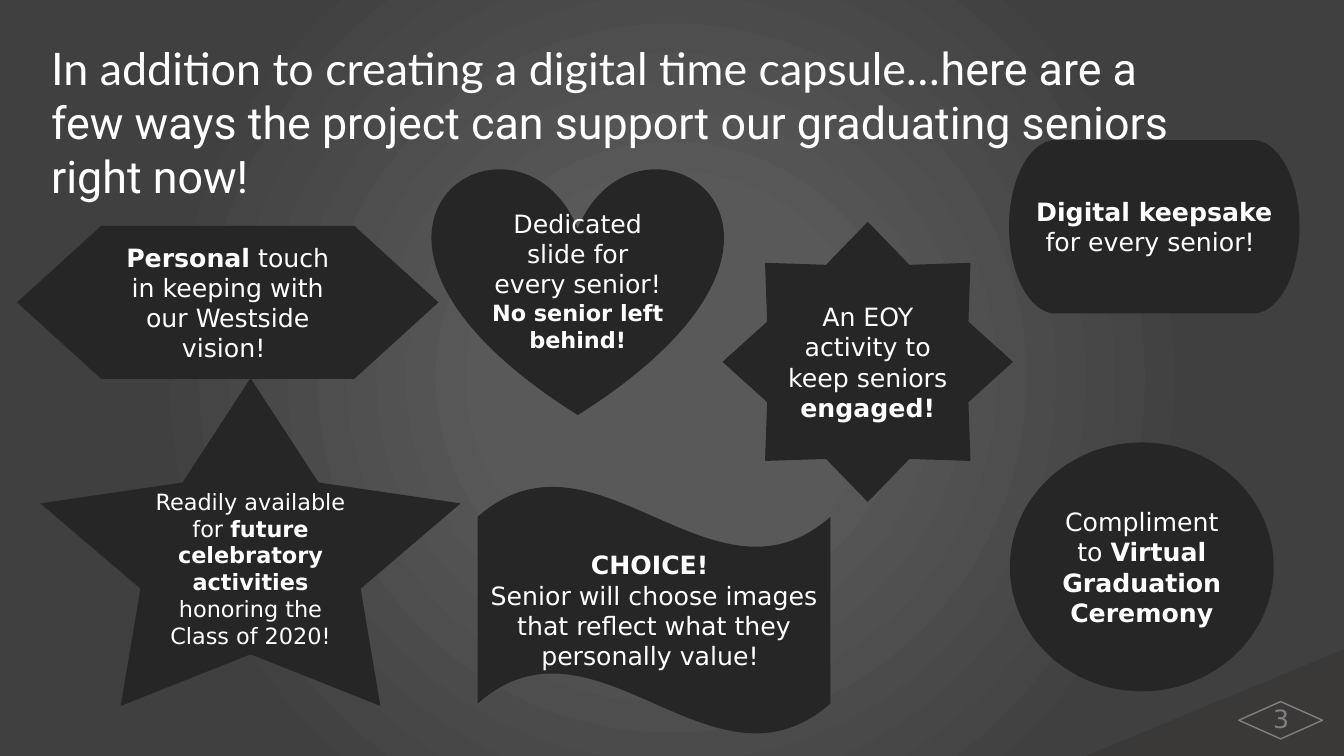
import pptx
import pptx.dml.color
import pptx.enum.shapes
import pptx.enum.text
import pptx.oxml
import pptx.oxml.ns
import pptx.util

Cm = pptx.util.Cm
Pt = pptx.util.Pt
RGB = pptx.dml.color.RGBColor
SHAPE = pptx.enum.shapes.MSO_SHAPE
ALIGN = pptx.enum.text.PP_ALIGN
MIDDLE = pptx.enum.text.MSO_ANCHOR.MIDDLE

WHITE = RGB(0xFF, 0xFF, 0xFF)
CHARCOAL = RGB(0x26, 0x26, 0x26)
CORNER_BROWN = RGB(0x3B, 0x38, 0x38)
GREY = RGB(0x80, 0x80, 0x80)
GLOW = RGB(0x59, 0x59, 0x59)
EDGE = RGB(0x40, 0x40, 0x40)
BODY_FONT = "DejaVu Sans"

# Shape, box in cm, and paragraphs of (text, size, bold) runs
IDEAS = [
    (SHAPE.HEART, (10.9, 4.19, 7.32, 6.27),
     [[("Dedicated slide for every senior! ", 18, False),
       ("No senior left behind!", 16, True)]]),
    (SHAPE.FLOWCHART_TERMINATOR, (25.43, 3.53, 7.32, 4.37),
     [[("Digital keepsake ", 18, True), ("for every senior! ", 18, False)]]),
    (SHAPE.FLOWCHART_CONNECTOR, (25.45, 11.15, 6.65, 6.27),
     [[("Compliment to ", 18, False),
       ("Virtual Graduation Ceremony", 18, True)]]),
    (SHAPE.WAVE, (12.04, 12.24, 8.89, 6.27),
     [[("CHOICE! ", 18, True)],
      [("Senior will choose images that reflect what they "
        "personally value! ", 18, False)]]),
    (SHAPE.FLOWCHART_PREPARATION, (0.43, 5.69, 10.62, 3.86),
     [[("Personal", 18, True),
       (" touch in keeping with our Westside vision! ", 18, False)]]),
    (SHAPE.STAR_5_POINT, (1.02, 9.53, 10.59, 8.26),
     [[("Readily available for ", 16, False),
       ("future celebratory activities ", 16, True),
       ("honoring the Class of 2020!", 16, False)]]),
    (SHAPE.STAR_8_POINT, (18.21, 5.59, 7.32, 7.06),
     [[("An EOY activity to keep seniors ", 18, False),
       ("engaged!", 18, True)]]),
]


def add_run(p, text, size, font=BODY_FONT, color=WHITE, bold=False):
    r = p.add_run()
    r.text = text
    r.font.size = Pt(size)
    r.font.name = font
    r.font.color.rgb = color
    r.font.bold = bold


def add_plain_shape(s, kind, box, fill=None, line=None):
    sp = s.shapes.add_shape(kind, *map(Cm, box))
    sp.shadow.inherit = False
    if fill is None:
        sp.fill.background()
    else:
        sp.fill.solid()
        sp.fill.fore_color.rgb = fill
    if line is None:
        sp.line.fill.background()
    else:
        sp.line.color.rgb = line
        sp.line.width = Pt(1)
    return sp


def add_text_box(s, box):
    tf = s.shapes.add_textbox(*map(Cm, box)).text_frame
    tf.word_wrap = True
    return tf


def paint_background(s):
    """Fill the slide with a glow that darkens from the centre outwards."""
    stops = "".join(
        f'<a:gs pos="{pos * 1000}"><a:srgbClr val="{color}"/></a:gs>'
        for pos, color in [(0, GLOW), (23, GLOW), (69, EDGE), (97, EDGE)])
    bg = pptx.oxml.parse_xml(
        f'<p:bg {pptx.oxml.ns.nsdecls("p", "a")}><p:bgPr>'
        f'<a:gradFill rotWithShape="1"><a:gsLst>{stops}</a:gsLst>'
        '<a:path path="circle"><a:fillToRect l="50000" t="50000" '
        'r="50000" b="50000"/></a:path></a:gradFill>'
        '<a:effectLst/></p:bgPr></p:bg>')
    s.element.cSld.insert(0, bg)


def add_page_corner(s, box, number):
    left, top, width, height = box
    wedge = add_plain_shape(s, SHAPE.ISOSCELES_TRIANGLE, box, CORNER_BROWN)
    wedge.adjustments[0] = 1
    add_plain_shape(s, SHAPE.DIAMOND, (left + 3.86, top + 1.32, 2.11, 0.94),
                    line=GREY)
    tf = add_text_box(s, (left - 2.24, top + 1.27, 7.62, 1.02))
    tf.vertical_anchor = MIDDLE
    p = tf.paragraphs[0]
    p.alignment = ALIGN.RIGHT
    p.line_spacing = 0.9
    add_run(p, number, 18, color=GREY)


def add_idea(s, kind, box, paragraphs):
    sp = add_plain_shape(s, kind, box, CHARCOAL)
    if kind == SHAPE.STAR_5_POINT:
        sp.adjustments[0] = 0.262
    tf = sp.text_frame
    tf.word_wrap = True
    tf.vertical_anchor = MIDDLE
    for i, runs in enumerate(paragraphs):
        p = tf.add_paragraph() if i else tf.paragraphs[0]
        p.alignment = ALIGN.CENTER
        for text, size, bold in runs:
            add_run(p, text, size, bold=bold)


def add_title(s, box):
    p = add_text_box(s, box).paragraphs[0]
    add_run(p, "In addition to creating a digital time capsule…", 32, "Lato")
    add_run(p, "here are a few ways the project can support our graduating "
               "seniors right now!", 32, "Roboto")


def main():
    prs = pptx.Presentation()
    prs.slide_width = Cm(33.87)
    prs.slide_height = Cm(19.05)
    s = prs.slides.add_slide(prs.slide_layouts[6])
    paint_background(s)
    add_page_corner(s, (27.36, 16.36, 6.51, 2.69), "3")
    for kind, box, paragraphs in IDEAS:
        add_idea(s, kind, box, paragraphs)
    add_title(s, (1.04, 0.91, 28.7, 4.37))
    prs.save("out.pptx")


if __name__ == "__main__":
    main()
